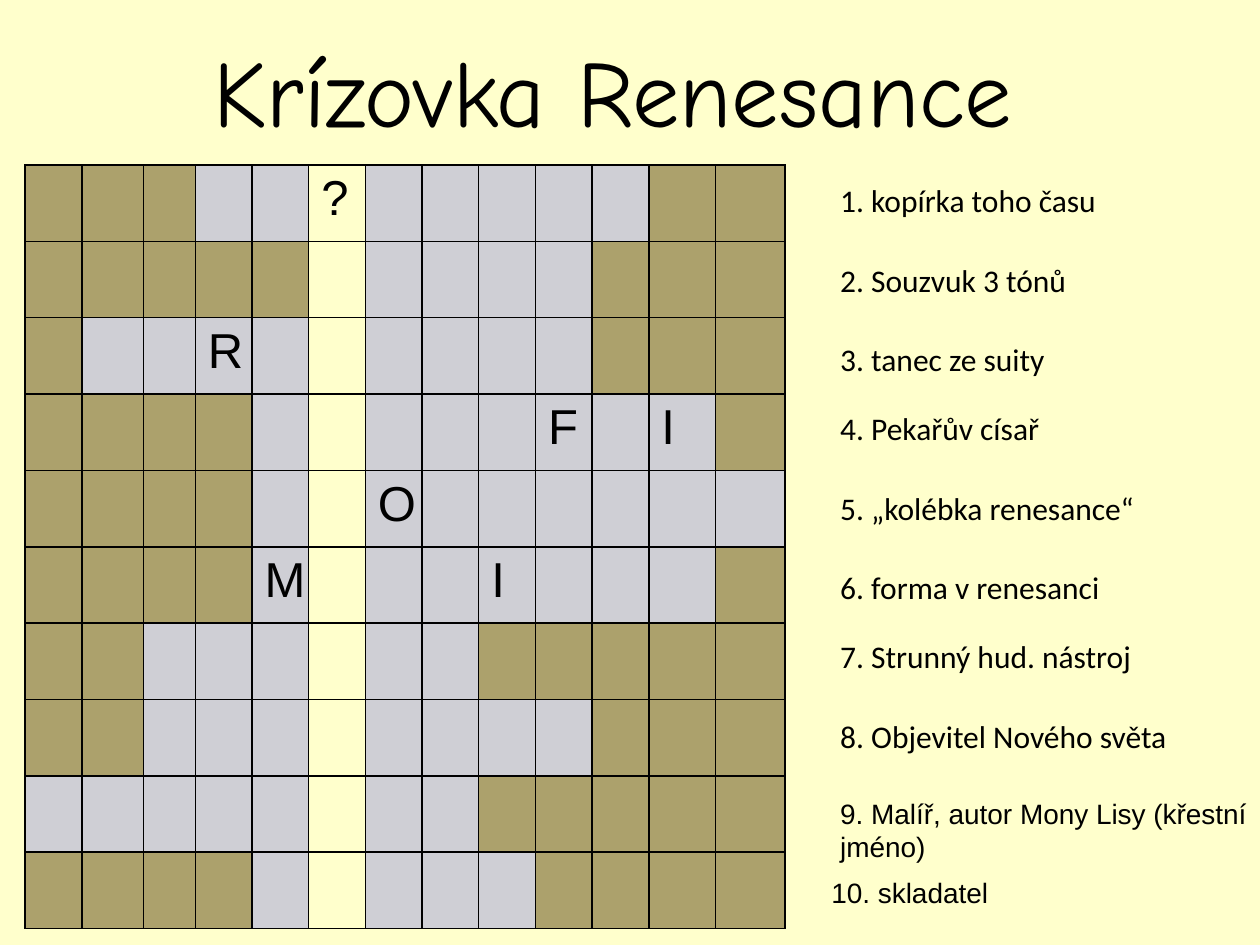
from lxml.etree import SubElement
from pptx import Presentation
from pptx.dml.color import RGBColor
from pptx.enum.text import MSO_ANCHOR, MSO_AUTO_SIZE, PP_ALIGN
from pptx.oxml.ns import qn
from pptx.util import Inches, Pt

THEME = {
    "paper": RGBColor.from_string("FFFFCC"),
    "blocked": RGBColor.from_string("ACA16C"),
    "answer": RGBColor.from_string("CFCFD5"),
    "ink": RGBColor.from_string("000000"),
    "title": {"name": "Comic Neue", "size": Pt(54), "bold": False},
    "letter": {"name": "Arial", "size": Pt(28), "bold": False},
    "clue": {"name": "Calibri", "size": Pt(18)},
    "late_clue": {"name": "Arial", "size": Pt(16)},
}


def write(frame, text, style):
    frame.text = text
    font = frame.paragraphs[0].runs[0].font
    for attribute, value in THEME[style].items():
        setattr(font, attribute, value)
    font.color.rgb = THEME["ink"]


def add_borders(cell):
    properties = cell._tc.get_or_add_tcPr()
    for side in ("a:lnL", "a:lnR", "a:lnT", "a:lnB"):
        line = SubElement(properties, qn(side), w=str(Pt(1)))
        fill = SubElement(line, qn("a:solidFill"))
        SubElement(fill, qn("a:srgbClr"), val=str(THEME["ink"]))


presentation = Presentation()
presentation.slide_width, presentation.slide_height = Inches(10), Inches(7.5)
slide = presentation.slides.add_slide(presentation.slide_layouts[5])
slide.background.fill.solid()
slide.background.fill.fore_color.rgb = THEME["paper"]

# Title
title = slide.shapes.title
title_place = {"left": 0.35, "top": 0.21, "width": 9.03, "height": 1.01}
for attribute, value in title_place.items():
    setattr(title, attribute, Inches(value))
write(title.text_frame, "Krízovka Renesance", "title")
title.text_frame.paragraphs[0].alignment = PP_ALIGN.CENTER
title.text_frame.vertical_anchor = MSO_ANCHOR.TOP

# Crossword: first and last column of each answer, and the letters given
answer_spans = [(3, 10), (5, 9), (1, 9), (4, 11), (4, 12),
                (4, 11), (2, 7), (2, 9), (0, 7), (4, 8)]
given_letters = {(0, 5): "?", (2, 3): "R", (3, 9): "F", (3, 11): "I",
                 (4, 6): "O", (5, 4): "M", (5, 8): "I"}
column_widths = [0.45, 0.49, 0.41] + [0.45] * 8 + [0.53, 0.55]
secret_column = 5

crossword = slide.shapes.add_table(
    len(answer_spans), len(column_widths),
    Inches(0.2), Inches(1.31), Inches(6.06), Inches(6.06)).table
crossword.first_row = crossword.horz_banding = False
for column, width in zip(crossword.columns, column_widths):
    column.width = Inches(width)

for row, (first, last) in enumerate(answer_spans):
    crossword.rows[row].height = Inches(6.06 / len(answer_spans))
    for column in range(len(column_widths)):
        square = crossword.cell(row, column)
        add_borders(square)
        if column == secret_column:
            colour = "paper"
        else:
            colour = "answer" if first <= column <= last else "blocked"
        square.fill.solid()
        square.fill.fore_color.rgb = THEME[colour]
        if (row, column) in given_letters:
            write(square.text_frame, given_letters[row, column], "letter")

# Clues: left, top, width, height, style, wording
clues = [
    (6.57, 1.39, 3.2, 0.4, "clue", "1. kopírka toho času"),
    (6.57, 2.02, 3.23, 0.4, "clue", "2. Souzvuk 3 tónů"),
    (6.57, 2.65, 2.79, 0.4, "clue", "3. tanec ze suity"),
    (6.57, 3.2, 2.74, 0.4, "clue", "4. Pekařův císař"),
    (6.57, 3.83, 3.11, 0.4, "clue", "5. „kolébka renesance“"),
    (6.57, 4.46, 2.99, 0.4, "clue", "6. forma v renesanci"),
    (6.57, 5.01, 2.84, 0.4, "clue", "7. Strunný hud. nástroj"),
    (6.57, 5.64, 3.01, 0.4, "clue", "8. Objevitel Nového světa"),
    (6.57, 6.27, 3.43, 0.64, "late_clue",
     "9. Malíř, autor Mony Lisy (křestní jméno)"),
    (6.5, 6.9, 3.23, 0.37, "late_clue", "10. skladatel"),
]
for *place, style, wording in clues:
    clue = slide.shapes.add_textbox(*map(Inches, place)).text_frame
    clue.word_wrap = True
    clue.auto_size = MSO_AUTO_SIZE.SHAPE_TO_FIT_TEXT
    write(clue, wording, style)

presentation.save("out.pptx")
